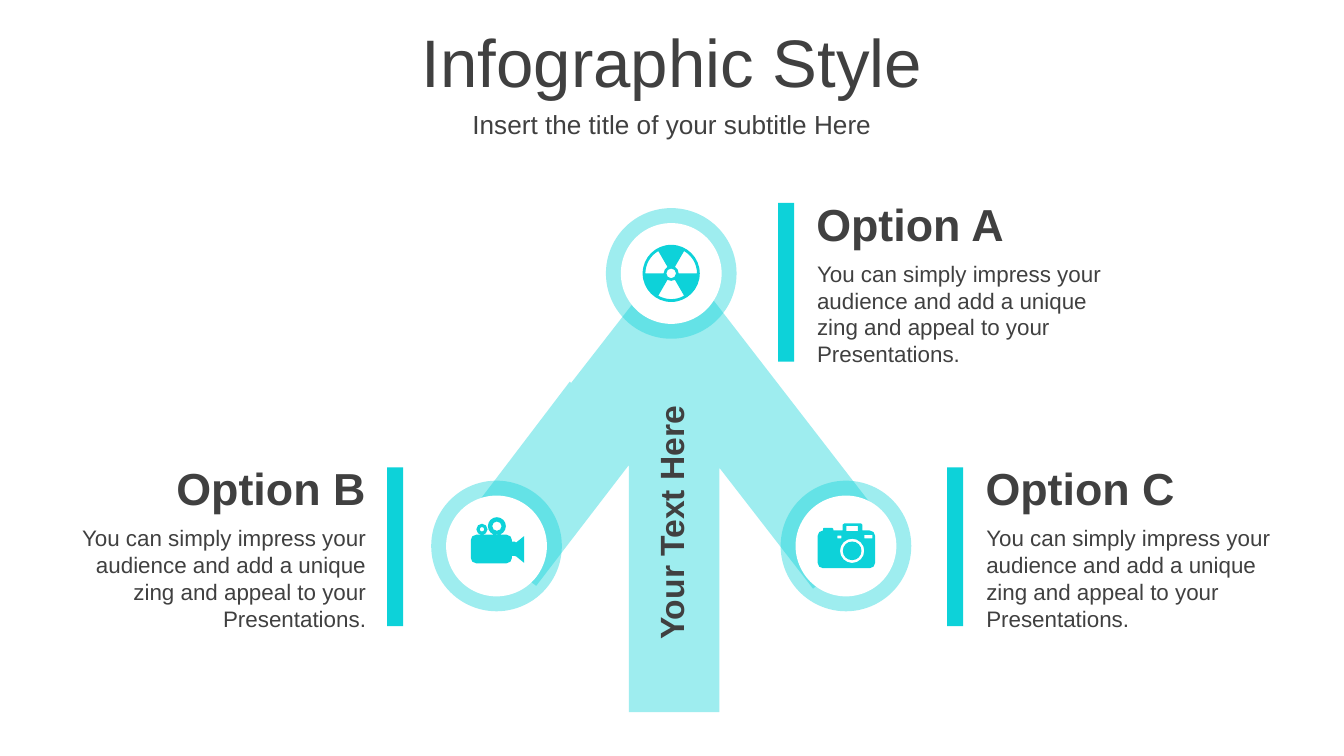
"""Build the three-option tree infographic slide."""
from math import cos, radians, sin, tan

from lxml.etree import SubElement
from pptx import Presentation
from pptx.dml.color import RGBColor
from pptx.enum.shapes import MSO_SHAPE
from pptx.enum.text import MSO_ANCHOR, MSO_AUTO_SIZE, PP_ALIGN
from pptx.oxml.ns import qn
from pptx.util import Pt

CYAN = RGBColor(0x0D, 0xD2, 0xD9)
WHITE = RGBColor(0xFF, 0xFF, 0xFF)
DARK = RGBColor(0x40, 0x40, 0x40)
UNITS_PER_POINT = 100
DESCRIPTION = (
    "You can simply impress your audience and add a unique zing and appeal "
    "to your Presentations."
)

presentation = Presentation()
presentation.slide_width, presentation.slide_height = Pt(720), Pt(405)
slide = presentation.slides.add_slide(presentation.slide_layouts[0])
shapes = slide.shapes


def arc(center_x, center_y, radius, start=0, end=360):
    pieces = max(abs(end - start) // 90, 1)
    step = radians(end - start) / pieces
    reach = radius * 4 / 3 * tan(step / 4)
    points = [(center_x + radius * cos(radians(start)), center_y + radius * sin(radians(start)))]
    for piece in range(pieces):
        first = radians(start) + piece * step
        for angle, pull in [(first, reach), (first + step, -reach), (first + step, 0)]:
            points.append((
                center_x + radius * cos(angle) - pull * sin(angle),
                center_y + radius * sin(angle) + pull * cos(angle),
                "curve",
            ))
    return points


def paint(shape, color, opacity=100):
    shape.shadow.inherit = False
    shape.fill.solid()
    shape.fill.fore_color.rgb = color
    shape.line.fill.background()
    if opacity < 100:
        color_element = shape._element.spPr.find(qn("a:solidFill"))[0]
        SubElement(color_element, qn("a:alpha")).set("val", str(opacity * 1000))


node_x, top_y, bottom_y, spread = 359.6, 146.5, 292.5, 93.6
nodes = [(node_x, top_y), (node_x - spread, bottom_y), (node_x + spread, bottom_y)]

tree = [
    (361.4, 133.9), (476.6, 283), (435.6, 315.4), (385.4, 250.6), (385.4, 381.6),
    (337, 381.6), (337, 249.1), (287.3, 313.9), (246.2, 282.2), (305.3, 204.5),
    (306, 205.2),
]
camera_body = [
    *arc(440.9, 287.1, 2.9, 180, 270),
    (440.9, 283.2), (441.4, 282.8), (445.9, 282.8), (446.4, 283.4), (446.4, 284.2),
    (451.4, 284.2), (451.4, 281.2), (452.2, 280.4), (461.2, 280.4), (462, 281.2),
    (462, 284.2),
    *arc(465.9, 287.1, 2.9, 270, 360),
    *arc(465.9, 301.5, 2.9, 0, 90),
    *arc(440.9, 301.5, 2.9, 90, 180),
]
camera_windows = [
    [(left, top), (right, top), (right, bottom), (left, bottom)]
    for left, top, right, bottom in [
        (448.6, 287, 450.7, 288.5),
        (463, 286.6, 467.3, 288.5),
        (453.4, 281.8, 459.6, 284.6),
    ]
]
camera = [camera_body, *camera_windows, arc(456.5, 295.1, 6.5), arc(456.5, 295.1, 5)]
video_body = [
    *arc(255.1, 289.4, 2.9, 180, 270),
    *arc(271.4, 289.4, 2.9, 270, 360),
    (274.3, 290.2), (275.8, 290.2), (276.5, 290.7), (280.8, 287.2),
    (280.8, 301.6), (276.5, 298.1), (275.8, 297.9), (274.3, 297.9),
    *arc(271.4, 298.9, 2.9, 0, 90),
    *arc(255.1, 298.9, 2.9, 90, 180),
]
video = [
    video_body,
    arc(266.2, 281.9, 4.8), arc(266.2, 281.9, 2.5),
    arc(258.2, 283.6, 3), arc(258.2, 283.6, 1.2),
]
radiation_wedges = [
    arc(node_x, top_y, 13.8, start, start + 60) + arc(node_x, top_y, 4, start + 60, start)
    for start in (60, 180, 300)
]
radiation = [arc(node_x, top_y, 15.3), *radiation_wedges, arc(node_x, top_y, 2.6)]

for contours, opacity in [([tree], 40), (camera, 100), (video, 100), (radiation, 100)]:
    builder = None
    for contour in contours:
        points = [(round(x * UNITS_PER_POINT), round(y * UNITS_PER_POINT)) for x, y, *_ in contour]
        if builder is None:
            builder = shapes.build_freeform(*points[0], scale=Pt(1) / UNITS_PER_POINT)
        else:
            builder.move_to(*points[0])
        builder.add_line_segments(points[1:], close=True)
    outline = builder.convert_to_shape()
    paint(outline, CYAN, opacity)
    path_element = outline._element.find(".//" + qn("a:path"))
    segments = list(path_element.iter(qn("a:moveTo"), qn("a:lnTo")))
    all_points = sum(contours, [])
    curved = [segment for segment, point in zip(segments, all_points) if len(point) == 3]
    for index in range(0, len(curved), 3):
        bezier = SubElement(path_element, qn("a:cubicBezTo"))
        curved[index].addprevious(bezier)
        for segment in curved[index:index + 3]:
            bezier.append(segment[0])
            path_element.remove(segment)
    if contours[0] is tree:
        for center_x, center_y in nodes:
            for radius, color, disc_opacity in [(35, CYAN, 40), (27, WHITE, 100)]:
                disc = shapes.add_shape(
                    MSO_SHAPE.OVAL, Pt(center_x - radius), Pt(center_y - radius),
                    Pt(2 * radius), Pt(2 * radius),
                )
                paint(disc, color, disc_opacity)

heading = {"size": Pt(24), "bold": True}
detail = {"size": Pt(12), "bold": False}
texts = [
    (shapes.title, "Infographic Style", (0, 9.7, 720, 45.4),
     PP_ALIGN.CENTER, {"size": Pt(36), "bold": False}, 0),
    (slide.placeholders[1], "Insert the title of your subtitle Here", (0, 55.4, 720, 22.3),
     PP_ALIGN.CENTER, {"size": Pt(14), "bold": False}, 0),
    (None, "Your Text Here", (262.1, 265.7, 194.4, 28.8),
     PP_ALIGN.CENTER, {"size": Pt(18), "bold": True}, 270),
]
for name, bar_left, bar_top, text_left, width, alignment in [
    ("Option A", 416.8, 108.7, 430.2, 171, PP_ALIGN.LEFT),
    ("Option B", 207.4, 250.4, 31.9, 171, PP_ALIGN.RIGHT),
    ("Option C", 507.4, 250.4, 520.9, 174, PP_ALIGN.LEFT),
]:
    bar = shapes.add_shape(MSO_SHAPE.RECTANGLE, Pt(bar_left), Pt(bar_top), Pt(8.6), Pt(85))
    paint(bar, CYAN)
    texts.append((None, name, (text_left, bar_top - 6.9, width, 36), alignment, heading, 0))
    texts.append((None, DESCRIPTION, (text_left + 0.4, bar_top + 26.5, width, 65.5),
                  alignment, detail, 0))

for shape, text, frame, alignment, font_format, rotation in texts:
    left, top, width, height = [Pt(length) for length in frame]
    if shape is None:
        shape = shapes.add_textbox(left, top, width, height)
    shape.left, shape.top, shape.width, shape.height = left, top, width, height
    shape.rotation = rotation
    text_frame = shape.text_frame
    text_frame.auto_size = MSO_AUTO_SIZE.NONE
    text_frame.word_wrap = True
    text_frame.vertical_anchor = MSO_ANCHOR.MIDDLE
    paragraph = text_frame.paragraphs[0]
    paragraph.alignment = alignment
    paragraph.space_before = Pt(0)
    run = paragraph.add_run()
    run.text = text
    run.font.color.rgb = DARK
    for attribute, value in {"name": "Arial", **font_format}.items():
        setattr(run.font, attribute, value)

presentation.save("out.pptx")
